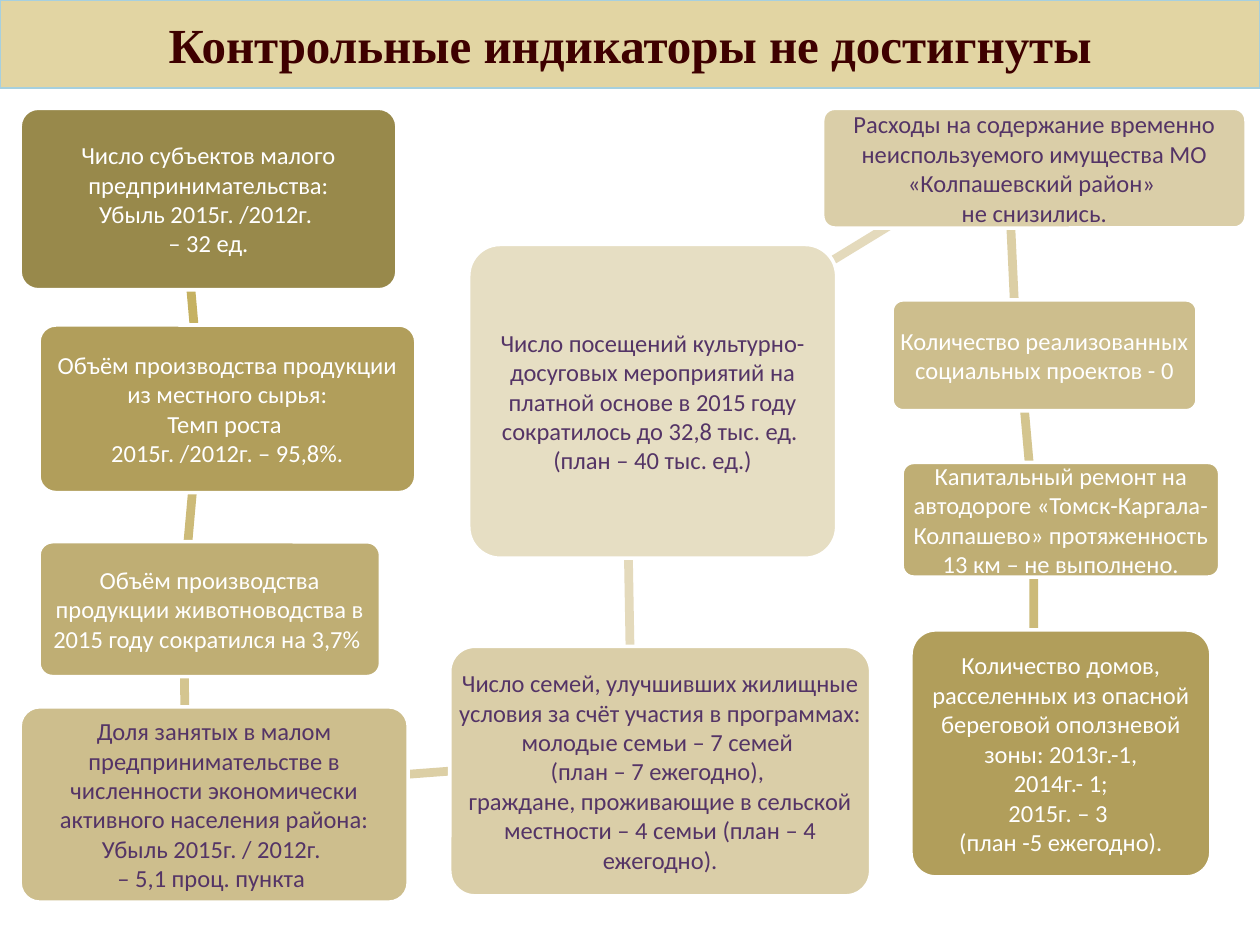
from dataclasses import dataclass

from pptx import Presentation
from pptx.dml.color import RGBColor
from pptx.enum.shapes import MSO_SHAPE
from pptx.enum.text import MSO_ANCHOR, PP_ALIGN
from pptx.util import Inches, Pt


@dataclass(frozen=True)
class Theme:
    body_font: str = "Calibri"
    title_font: str = "Times New Roman"
    body_size: int = 14
    title_size: int = 28
    white: str = "FFFFFF"
    purple: str = "543466"
    title_text: str = "3E0000"
    title_fill: str = "E2D5A3"
    title_line: str = "A6D0DF"
    box_fills: tuple = ("98894B", "B19E5B", "BFAE74", "CDBE8D", "DACEA8", "E6DEC3")
    link_fills: tuple = ("C5B161", "CCBA78", "D4C58F", "DCCFA5", "E4DABC")


THEME = Theme()
CORNER = 0.1
CORNER_INSET = 0.29
TEXT_MARGIN = 0.06
LINK_THICKNESS = 0.07

LINKS = [
    (0.68, 2.27, 1.67, 85, 0),
    (0.73, 3.89, 1.59, 95.1, 1),
    (0.69, 5.46, 1.55, 89.3, 2),
    (1.48, 6.11, 3.53, 355.7, 3),
    (3.53, 4.51, 2.92, 269, 4),
    (4.71, 2.11, 3.54, 328.6, 4),
    (7.29, 1.93, 1.48, 87.3, 3),
    (7.48, 3.33, 1.32, 84.9, 2),
    (7.28, 4.91, 1.85, 89.9, 1),
]

INDICATORS = [
    ((0.16, 0.86, 2.99, 1.44), 0, THEME.white, [
        "Число субъектов малого предпринимательства:",
        "Убыль 2015г. /2012г. ",
        "– 32 ед.",
    ]),
    ((0.31, 2.58, 2.99, 1.33), 1, THEME.white, [
        "Объём производства продукции из местного сырья:",
        "Темп роста ",
        "2015г. /2012г. – 95,8%.",
    ]),
    ((0.31, 4.3, 2.71, 1.07), 2, THEME.white, [
        "Объём производства продукции животноводства в 2015 году сократился на 3,7% ",
    ]),
    ((0.16, 5.61, 3.08, 1.55), 3, THEME.purple, [
        "Доля занятых в малом предпринимательстве в численности "
        "экономически активного населения района:",
        "Убыль 2015г. / 2012г. ",
        "– 5,1 проц. пункта ",
    ]),
    ((3.57, 5.13, 3.34, 1.98), 4, THEME.purple, [
        "Число семей, улучшивших жилищные условия за счёт участия в программах:",
        "молодые семьи – 7 семей ",
        "(план – 7 ежегодно), ",
        "граждане, проживающие в сельской местности – 4 семьи (план – 4 ежегодно).",
    ]),
    ((3.72, 1.94, 2.92, 2.49), 5, THEME.purple, [
        "Число посещений культурно-досуговых мероприятий на платной основе "
        "в 2015 году сократилось до 32,8 тыс. ед. ",
        "(план – 40 тыс. ед.)",
    ]),
    ((6.53, 0.86, 3.36, 0.95), 4, THEME.purple, [
        "Расходы на содержание временно неиспользуемого имущества "
        "МО «Колпашевский район» ",
        "не снизились.",
    ]),
    ((7.08, 2.38, 2.42, 0.88), 3, THEME.white, [
        "Количество реализованных социальных проектов - 0",
    ]),
    ((7.16, 3.67, 2.52, 0.91), 2, THEME.white, [
        "Капитальный ремонт на автодороге «Томск-Каргала-Колпашево» "
        "протяженность 13 км – не выполнено.",
    ]),
    ((7.23, 5, 2.38, 1.96), 1, THEME.white, [
        "Количество домов, расселенных из опасной береговой оползневой зоны: 2013г.-1,",
        "2014г.- 1;",
        "2015г. – 3 ",
        "(план -5 ежегодно).",
    ]),
]


def add_block(page, preset, frame, fill, line=None, line_width=0):
    block = page.shapes.add_shape(preset, *(Inches(length) for length in frame))
    block.shadow.inherit = False
    block.fill.solid()
    block.fill.fore_color.rgb = RGBColor.from_string(fill)
    if line:
        block.line.color.rgb = RGBColor.from_string(line)
        block.line.width = Pt(line_width)
    else:
        block.line.fill.background()
    return block


def write_text(block, lines, font, size, color, bold=False):
    frame = block.text_frame
    frame.word_wrap = True
    frame.vertical_anchor = MSO_ANCHOR.MIDDLE
    for index, line in enumerate(lines):
        para = frame.add_paragraph() if index else frame.paragraphs[0]
        para.text = line
        para.alignment = PP_ALIGN.CENTER
        para.font.name = font
        para.font.size = Pt(size)
        para.font.bold = bold
        para.font.color.rgb = RGBColor.from_string(color)


def add_title(page, text):
    banner = add_block(page, MSO_SHAPE.RECTANGLE, (0, 0, 10, 0.7),
                       THEME.title_fill, THEME.title_line, 0.75)
    write_text(banner, [text], THEME.title_font, THEME.title_size,
               THEME.title_text, bold=True)


def add_link(page, left, top, length, angle, shade):
    link = add_block(page, MSO_SHAPE.RECTANGLE,
                     (left, top, length, LINK_THICKNESS), THEME.link_fills[shade])
    link.rotation = angle


def add_indicator(page, frame, shade, color, lines):
    box = add_block(page, MSO_SHAPE.ROUNDED_RECTANGLE, frame,
                    THEME.box_fills[shade], THEME.white, 2)
    box.adjustments[0] = CORNER
    margin = Inches(max(0, TEXT_MARGIN - CORNER_INSET * CORNER * min(frame[2:])))
    text = box.text_frame
    text.margin_left = text.margin_right = margin
    text.margin_top = text.margin_bottom = margin
    write_text(box, lines, THEME.body_font, THEME.body_size, color)


def main():
    deck = Presentation()
    deck.slide_width = Inches(10)
    deck.slide_height = Inches(7.5)
    page = deck.slides.add_slide(deck.slide_layouts[6])
    for link in LINKS:
        add_link(page, *link)
    for indicator in INDICATORS:
        add_indicator(page, *indicator)
    add_title(page, "Контрольные индикаторы не достигнуты")
    deck.save("out.pptx")


if __name__ == "__main__":
    main()
